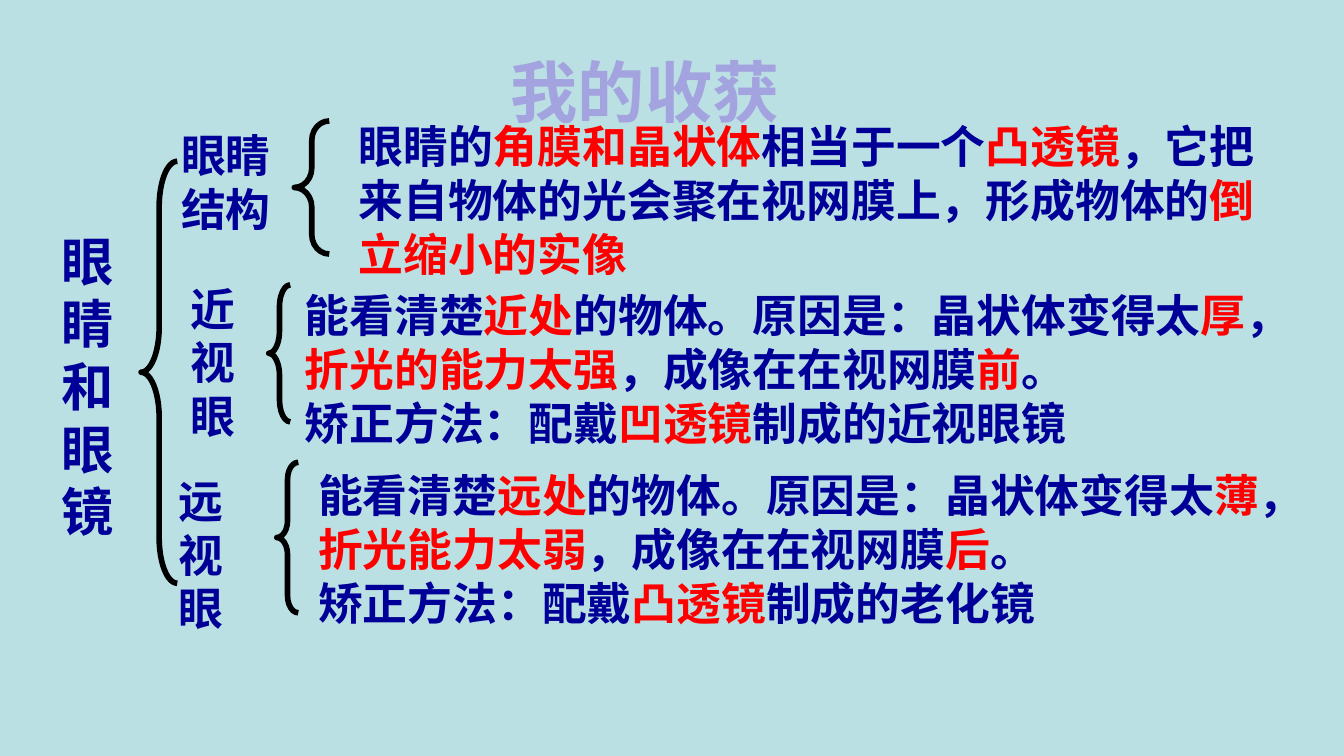
from dataclasses import dataclass

from lxml import etree
from pptx import Presentation
from pptx.dml.color import RGBColor
from pptx.enum.shapes import MSO_SHAPE
from pptx.enum.text import MSO_ANCHOR, PP_ALIGN
from pptx.oxml.ns import qn
from pptx.util import Pt

LEFT_BRACE = MSO_SHAPE.LEFT_BRACE
TOP = MSO_ANCHOR.TOP
LEFT = PP_ALIGN.LEFT
CENTER = PP_ALIGN.CENTER


@dataclass(frozen=True)
class Theme:
    font: str = "Noto Sans CJK SC"
    background: RGBColor = RGBColor(0xBB, 0xE0, 0xE3)
    title: RGBColor = RGBColor(0xA3, 0xA3, 0xE0)
    text: RGBColor = RGBColor(0x00, 0x00, 0x99)
    key: RGBColor = RGBColor(0xFF, 0x00, 0x00)
    brace: RGBColor = RGBColor(0x00, 0x00, 0x00)
    title_size: int = 36
    topic_size: int = 28
    body_size: int = 24


theme = Theme()


def style_span(span, size, color):
    span.font.name = theme.font
    span.font.size = Pt(size)
    span.font.bold = True
    span.font.color.rgb = color
    east_asian = etree.SubElement(span.font._element, qn("a:ea"))
    east_asian.set("typeface", theme.font)


def fill_text(box, paragraphs, size, color=theme.text, align=LEFT, wrap=True):
    frame = box.text_frame
    frame.word_wrap = wrap
    frame.vertical_anchor = TOP
    frame.margin_left = frame.margin_right = Pt(7.2)
    frame.margin_top = Pt(6)
    frame.margin_bottom = Pt(3.6)
    for index, pieces in enumerate(paragraphs):
        para = frame.add_paragraph() if index else frame.paragraphs[0]
        para.alignment = align
        para.line_spacing = Pt(round(size * 1.2, 1))
        para.space_before = Pt(0)
        for position, piece in enumerate(pieces.split("|")):
            span = para.add_run()
            span.text = piece
            style_span(span, size, theme.key if position % 2 else color)


deck = Presentation()
deck.slide_width = Pt(720)
deck.slide_height = Pt(405)
page = deck.slides.add_slide(deck.slide_layouts[5])
page.background.fill.solid()
page.background.fill.fore_color.rgb = theme.background

braces = [
    (75.6, 86.4, 19.4, 226.1, 1.25),
    (157.7, 64.8, 18.7, 71.3, 0.56),
    (144, 152.6, 11.5, 73.4, 1.03),
    (148.3, 247.7, 11.5, 80.6, 0.79),
]
for left, top, width, height, curve in braces:
    brace = page.shapes.add_shape(LEFT_BRACE, Pt(left), Pt(top), Pt(width), Pt(height))
    brace.adjustments[0] = curve
    brace.adjustments[1] = 0.5
    brace.shadow.inherit = False
    brace.fill.background()
    brace.line.color.rgb = theme.brace
    brace.line.width = Pt(3)

texts = [
    (25.9, 116.6, 44.6, 177.1, theme.topic_size, ["眼睛和眼镜"]),
    (90, 62.6, 76.3, 65.5, theme.body_size, ["眼睛结构"]),
    (185, 57.6, 498.2, 94.3, theme.body_size, [
        "眼睛的|角膜和晶状体|相当于一个|凸透镜|，它把来自物体的光会聚在视网膜上，形成物体的|倒立缩小的实像",
    ]),
    (95, 144.7, 41.8, 94.3, theme.body_size, ["近视眼"]),
    (156.2, 148.3, 563.8, 94.3, theme.body_size, [
        "能看清楚|近处|的物体。原因是：晶状体变得太|厚|，|折光的能力太强|，成像在在视网膜|前|。",
        "矫正方法：配戴|凹透镜|制成的近视眼镜",
    ]),
    (88.6, 247.7, 40, 94.3, theme.body_size, ["远视眼"]),
    (163.4, 244.8, 544.3, 94.3, theme.body_size, [
        "能看清楚|远处|的物体。原因是：晶状体变得太|薄|，|折光能力太弱|，成像在在视网膜|后|。",
        "矫正方法：配戴|凸透镜|制成的老化镜",
    ]),
]
for left, top, width, height, size, paragraphs in texts:
    box = page.shapes.add_textbox(Pt(left), Pt(top), Pt(width), Pt(height))
    fill_text(box, paragraphs, size)

title = page.shapes.title
title.left, title.top, title.width, title.height = Pt(265.7), Pt(20.9), Pt(159.8), Pt(51.1)
fill_text(title, ["我的收获"], theme.title_size, theme.title, CENTER, False)

deck.save("out.pptx")
